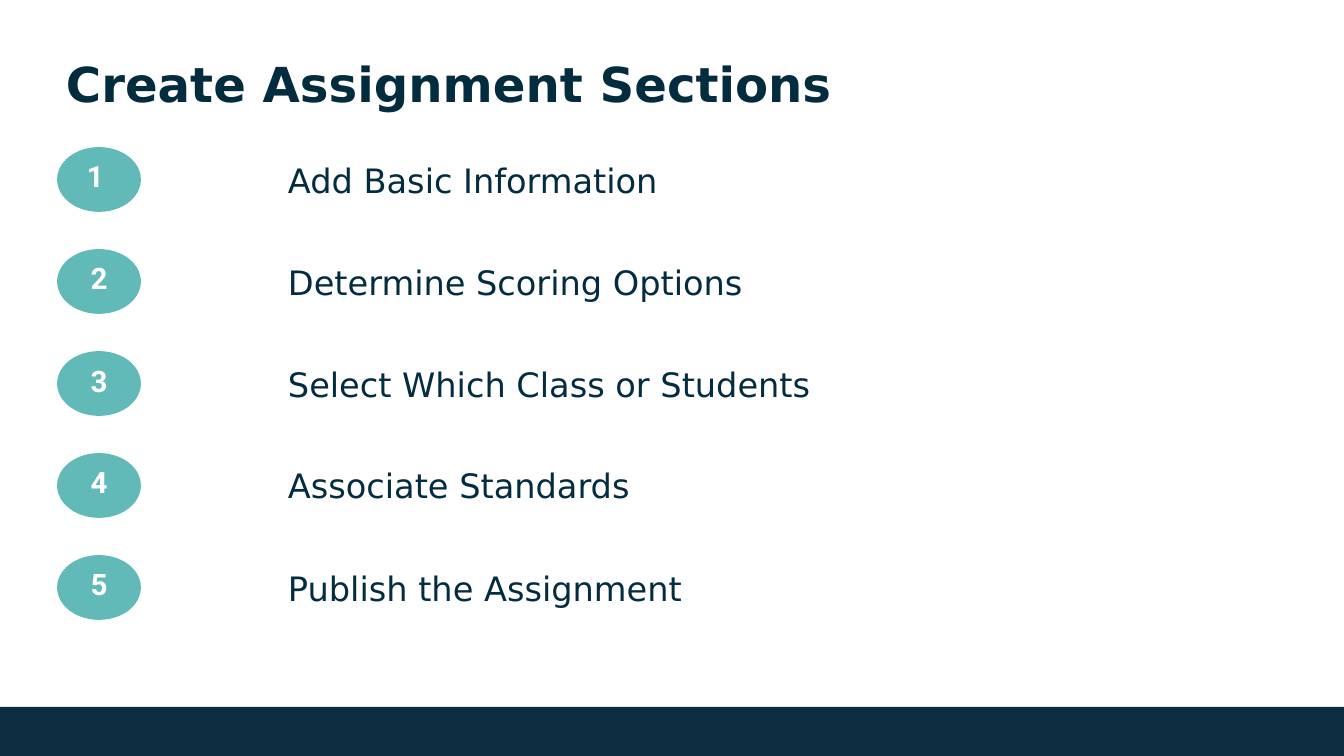
from dataclasses import dataclass

from pptx import Presentation
from pptx.dml.color import RGBColor
from pptx.enum.shapes import MSO_SHAPE
from pptx.enum.text import MSO_ANCHOR, MSO_AUTO_SIZE, PP_ALIGN
from pptx.shapes.autoshape import Shape
from pptx.slide import Slide
from pptx.text.text import TextFrame
from pptx.util import Emu, Pt

NAVY = RGBColor(0x04, 0x2C, 0x3F)
FOOTER_NAVY = RGBColor(0x0D, 0x2D, 0x40)
TEAL = RGBColor(0x62, 0xBA, 0xB8)
WHITE = RGBColor(0xFF, 0xFF, 0xFF)

SLIDE_WIDTH, SLIDE_HEIGHT = 1344, 756
FOOTER_TOP = 707
FIRST_STEP_TOP, STEP_PITCH = 152, 102


@dataclass(frozen=True)
class Step:
    number: str
    label: str


@dataclass(frozen=True)
class TextStyle:
    font: str
    size: float
    color: RGBColor
    bold: bool
    align: PP_ALIGN
    anchor: MSO_ANCHOR
    line_spacing: float
    margin_x: int
    margin_y: int


TITLE_STYLE = TextStyle("DejaVu Sans", 34.4, NAVY, True, PP_ALIGN.LEFT,
                        MSO_ANCHOR.BOTTOM, 0.9, 10, 5)
LABEL_STYLE = TextStyle("DejaVu Sans", 24, NAVY, False, PP_ALIGN.LEFT,
                        MSO_ANCHOR.TOP, 0.9, 4, 4)
NUMBER_STYLE = TextStyle("Roboto", 21.1, WHITE, True, PP_ALIGN.CENTER,
                         MSO_ANCHOR.MIDDLE, 0.8, 4, 4)

STEPS = [
    Step("1 ", "Add Basic Information"),
    Step("2", "Determine Scoring Options"),
    Step("3", "Select Which Class or Students"),
    Step("4", "Associate Standards"),
    Step("5", "Publish the Assignment"),
]


def px(length: int) -> Emu:
    """Convert pixels, 100.8 to the inch, into EMU."""
    return Emu(round(length * 914400 / 100.8))


def write_text(frame: TextFrame, text: str, style: TextStyle) -> None:
    frame.word_wrap = True
    frame.auto_size = MSO_AUTO_SIZE.NONE
    frame.vertical_anchor = style.anchor
    frame.margin_left = frame.margin_right = px(style.margin_x)
    frame.margin_top = frame.margin_bottom = px(style.margin_y)
    paragraph = frame.paragraphs[0]
    paragraph.alignment = style.align
    paragraph.line_spacing = style.line_spacing
    run = paragraph.add_run()
    run.text = text
    run.font.name = style.font
    run.font.size = Pt(style.size)
    run.font.bold = style.bold
    run.font.color.rgb = style.color


def add_filled_shape(slide: Slide, kind: MSO_SHAPE, left: int, top: int,
                     width: int, height: int, color: RGBColor) -> Shape:
    shape = slide.shapes.add_shape(kind, px(left), px(top), px(width), px(height))
    shape.shadow.inherit = False
    shape.fill.solid()
    shape.fill.fore_color.rgb = color
    shape.line.fill.background()
    return shape


def add_title(slide: Slide, text: str) -> None:
    title = slide.shapes.title
    title.left, title.top = px(56), px(56)
    title.width, title.height = px(1239), px(62)
    write_text(title.text_frame, text, TITLE_STYLE)


def add_step(slide: Slide, step: Step, top: int) -> None:
    label = slide.shapes.add_textbox(px(284), px(top + 8), px(783), px(45))
    write_text(label.text_frame, step.label, LABEL_STYLE)
    badge = add_filled_shape(slide, MSO_SHAPE.OVAL, 62, top, 74, 55, TEAL)
    badge.line.color.rgb = TEAL
    badge.line.width = Pt(7)
    write_text(badge.text_frame, step.number, NUMBER_STYLE)


def main() -> None:
    presentation = Presentation()
    presentation.slide_width = px(SLIDE_WIDTH)
    presentation.slide_height = px(SLIDE_HEIGHT)
    slide = presentation.slides.add_slide(presentation.slide_layouts[5])
    add_filled_shape(slide, MSO_SHAPE.RECTANGLE, 0, FOOTER_TOP, SLIDE_WIDTH,
                     SLIDE_HEIGHT - FOOTER_TOP, FOOTER_NAVY)
    add_title(slide, "Create Assignment Sections")
    for index, step in enumerate(STEPS):
        add_step(slide, step, FIRST_STEP_TOP + index * STEP_PITCH)
    presentation.save("out.pptx")


if __name__ == "__main__":
    main()
